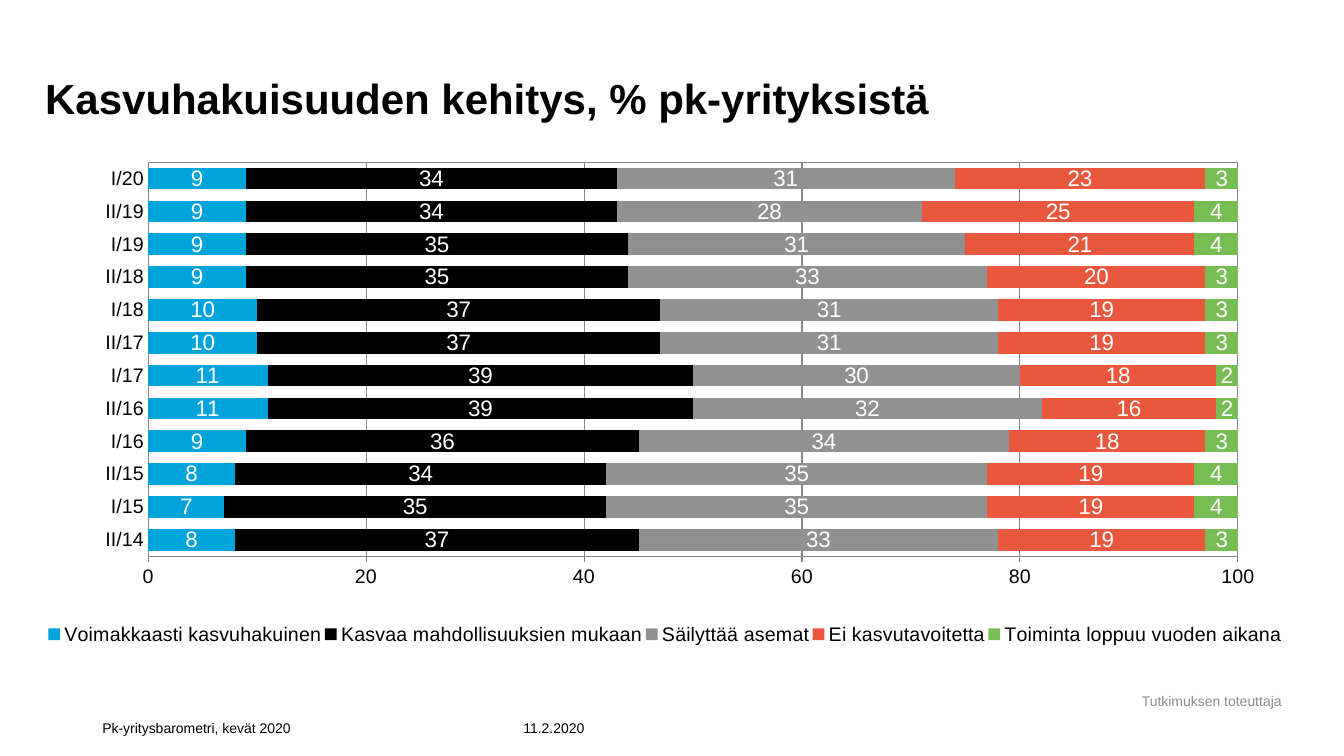
from lxml import etree
from pptx import Presentation
from pptx.chart.data import CategoryChartData
from pptx.dml.color import RGBColor
from pptx.enum.chart import (XL_CHART_TYPE as ChartType, XL_LABEL_POSITION as LabelPosition,
                             XL_LEGEND_POSITION as LegendPosition, XL_TICK_MARK as TickMark)
from pptx.enum.text import MSO_ANCHOR as Anchor, PP_ALIGN as Align
from pptx.oxml import parse_xml
from pptx.oxml.ns import nsdecls, qn
from pptx.util import Pt

EMU_PER_PX = 9525  # 96 px to the inch
FONT = "Arial"
BLACK, WHITE, GRID, MUTED = "000000", "FFFFFF", "878787", "8C8C8C"

PERIODS = ["II/14", "I/15", "II/15", "I/16", "II/16", "I/17",
           "II/17", "I/18", "II/18", "I/19", "II/19", "I/20"]
SERIES = [
    ("Voimakkaasti kasvuhakuinen", "00A3DA", [8, 7, 8, 9, 11, 11, 10, 10, 9, 9, 9, 9]),
    ("Kasvaa mahdollisuuksien mukaan", BLACK, [37, 35, 34, 36, 39, 39, 37, 37, 35, 35, 34, 34]),
    ("Säilyttää asemat", "919191", [33, 35, 35, 34, 32, 30, 31, 31, 33, 31, 28, 31]),
    ("Ei kasvutavoitetta", "E9573F", [19, 19, 19, 18, 16, 18, 19, 19, 20, 21, 25, 23]),
    ("Toiminta loppuu vuoden aikana", "78BD53", [3, 4, 4, 3, 2, 2, 3, 3, 3, 4, 4, 3]),
]


def px(*lengths):
    return [length * EMU_PER_PX for length in lengths]


def color(hex_code):
    return RGBColor.from_string(hex_code)


def format_font(font, size, hex_code=BLACK, bold=False):
    font.name, font.size, font.bold = FONT, Pt(size), bold
    font.color.rgb = color(hex_code)


def write_text(shape, text, size=10, hex_code=BLACK, bold=False,
               align=Align.LEFT, anchor=Anchor.BOTTOM):
    frame = shape.text_frame
    frame.word_wrap = True
    frame.vertical_anchor = anchor
    frame.text = text
    paragraph = frame.paragraphs[0]
    paragraph.alignment = align
    format_font(paragraph.runs[0].font, size, hex_code, bold)


def add_text(slide, box, text, **text_format):
    write_text(slide.shapes.add_textbox(*px(*box)), text, **text_format)


def add_title(slide, box, text):
    title = slide.shapes.title
    title.left, title.top, title.width, title.height = px(*box)
    frame = title.text_frame
    frame.margin_left = frame.margin_top = frame.margin_right = frame.margin_bottom = 0
    write_text(title, text, size=30, bold=True)


def set_layout(element, x, y, width, height, inner=False):
    """Place a chart part by fractions of the chart area."""
    for layout in element.findall(qn("c:layout")):
        element.remove(layout)
    target = '<c:layoutTarget val="inner"/>' if inner else ""
    layout = parse_xml(
        f'<c:layout {nsdecls("c")}><c:manualLayout>{target}'
        f'<c:xMode val="edge"/><c:yMode val="edge"/><c:x val="{x}"/><c:y val="{y}"/>'
        f'<c:w val="{width}"/><c:h val="{height}"/></c:manualLayout></c:layout>')
    if inner:
        element.insert(0, layout)
    else:
        element.find(qn("c:legendPos")).addnext(layout)


def format_plot_area(plot_area):
    set_layout(plot_area, 0.083, 0.011, 0.879, 0.763, inner=True)
    properties = etree.SubElement(plot_area, qn("c:spPr"))
    for parent in (properties, etree.SubElement(properties, qn("a:ln"), w="9525")):
        fill = etree.SubElement(parent, qn("a:solidFill"))
        etree.SubElement(fill, qn("a:srgbClr"), val=WHITE if parent is properties else GRID)
    # The fill comes before the outline
    properties.insert(0, properties.find(qn("a:solidFill")))


def format_axes(chart):
    category_axis, value_axis = chart.category_axis, chart.value_axis
    for axis, tick in ((category_axis, TickMark.NONE), (value_axis, TickMark.OUTSIDE)):
        axis.major_tick_mark, axis.minor_tick_mark = tick, TickMark.NONE
        axis.format.line.color.rgb = color(GRID)
        axis.format.line.width = Pt(0.75)
        format_font(axis.tick_labels.font, 14)
    value_axis.minimum_scale, value_axis.maximum_scale = 0, 100
    value_axis.major_unit = 20
    value_axis.has_major_gridlines = True
    gridline = value_axis.major_gridlines.format.line
    gridline.color.rgb = color(GRID)
    gridline.width = Pt(0.75)


def format_legend(chart):
    chart.has_legend = True
    legend = chart.legend
    legend.position = LegendPosition.BOTTOM
    legend.include_in_layout = True
    format_font(legend.font, 14)
    set_layout(legend._element, 0, 0.885, 1, 0.08)


def add_growth_chart(slide, box):
    data = CategoryChartData(number_format="0")
    data.categories = PERIODS
    for name, _, values in SERIES:
        data.add_series(name, values)
    chart = slide.shapes.add_chart(ChartType.BAR_STACKED, *px(*box), data).chart
    chart.has_title = False
    format_font(chart.font, 10)
    plot = chart.plots[0]
    plot.gap_width, plot.overlap, plot.vary_by_categories = 52, 100, False
    for series, (_, fill, _) in zip(plot.series, SERIES):
        series.format.fill.solid()
        series.format.fill.fore_color.rgb = color(fill)
        labels = series.data_labels
        labels.show_value = True
        labels.position = LabelPosition.CENTER
        format_font(labels.font, 16, WHITE)
    format_axes(chart)
    format_legend(chart)
    format_plot_area(chart._chartSpace.chart.plotArea)


def add_footer(slide, box):
    left, top, _, height = box
    add_text(slide, (left, top, 400, height), "Pk-yritysbarometri, kevät 2020")
    add_text(slide, (left + 401, top, 84, height), "11.2.2020")
    add_text(slide, (left + 983, top - 17, 166, 25), "Tutkimuksen toteuttaja",
             hex_code=MUTED, align=Align.CENTER, anchor=Anchor.MIDDLE)


def main():
    presentation = Presentation()
    presentation.slide_width, presentation.slide_height = px(1280, 720)
    slide = presentation.slides.add_slide(presentation.slide_layouts[5])
    add_title(slide, (43, 0, 1181, 117), "Kasvuhakuisuuden kehitys, % pk-yrityksistä")
    add_growth_chart(slide, (43, 149, 1181, 492))
    add_footer(slide, (88, 672, 1149, 34))
    presentation.save("out.pptx")


if __name__ == "__main__":
    main()
